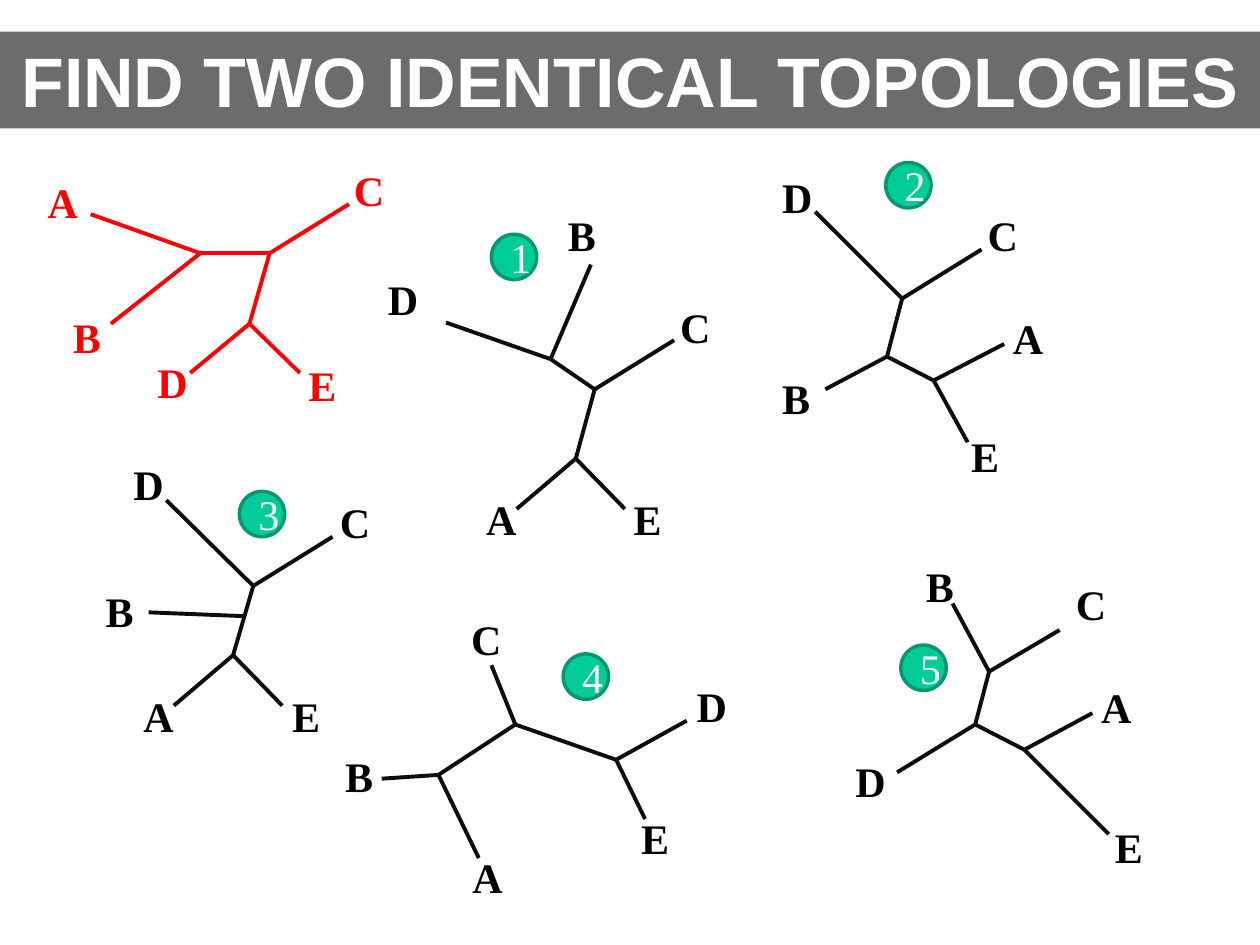
from dataclasses import dataclass

from lxml import etree
from pptx import Presentation
from pptx.dml.color import RGBColor
from pptx.enum.shapes import MSO_CONNECTOR, MSO_SHAPE
from pptx.enum.text import MSO_ANCHOR, MSO_AUTO_SIZE, PP_ALIGN
from pptx.oxml.ns import qn
from pptx.util import Inches, Pt

STRAIGHT, OVAL = MSO_CONNECTOR.STRAIGHT, MSO_SHAPE.OVAL
LEFT, CENTER = PP_ALIGN.LEFT, PP_ALIGN.CENTER
TOP, MIDDLE = MSO_ANCHOR.TOP, MSO_ANCHOR.MIDDLE
COLORS = {
    "banner": "404040", "white": "FFFFFF", "reference": "FF0000",
    "branch": "0D0D0D", "letter": "000000",
    "badge": "00CC99", "badge_edge": "009771",
}
SERIF, SANS = "Times New Roman", "Arial"
TITLE_ONLY = 5

# Grid of 1000 columns by 750 rows
SLIDE_WIDTH, SLIDE_HEIGHT = Inches(10), Inches(7.5)
CELL = SLIDE_WIDTH // 1000
LABEL_SIZE = (44, 51)
BADGE_SIZE = (36, 36)
Point = tuple[int, int]


@dataclass(frozen=True)
class Tip:
    letter: str
    joint: int      # index of the joint the branch grows from
    end: Point      # outer end of the branch
    label: Point    # top left of the letter's box


@dataclass(frozen=True)
class Tree:
    joints: tuple[Point, ...]
    tips: tuple[Tip, ...]
    trunk: tuple[tuple[int, int], ...] = ((0, 1), (1, 2))
    number: str = ""
    badge: Point = (0, 0)
    branch_color: str = "branch"
    letter_color: str = "letter"


TREES = (
    Tree(((159, 201), (214, 201), (198, 257)), (
        Tip("A", 0, (72, 170), (28, 135)),
        Tip("B", 0, (88, 257), (48, 242)),
        Tip("C", 1, (277, 162), (271, 126)),
        Tip("D", 2, (151, 296), (115, 278)),
        Tip("E", 2, (238, 296), (235, 280)),
    ), branch_color="reference", letter_color="reference"),
    Tree(((437, 285), (472, 309), (457, 364)), (
        Tip("D", 0, (354, 256), (298, 212)),
        Tip("B", 0, (469, 210), (441, 161)),
        Tip("C", 1, (535, 270), (530, 234)),
        Tip("A", 2, (410, 404), (376, 387)),
        Tip("E", 2, (496, 404), (493, 387)),
    ), number="1", badge=(390, 186)),
    Tree(((716, 237), (704, 283), (741, 302)), (
        Tip("D", 0, (647, 168), (611, 131)),
        Tip("C", 0, (779, 198), (774, 161)),
        Tip("B", 1, (655, 309), (611, 291)),
        Tip("A", 2, (797, 273), (794, 243)),
        Tip("E", 2, (768, 351), (761, 337)),
    ), number="2", badge=(703, 129)),
    # The branch of B starts partway along a single trunk line
    Tree(((201, 465), (185, 520), (193, 489)), (
        Tip("D", 0, (132, 397), (96, 359)),
        Tip("C", 0, (264, 426), (260, 389)),
        Tip("B", 2, (118, 486), (74, 460)),
        Tip("A", 1, (138, 560), (104, 543)),
        Tip("E", 1, (224, 560), (222, 543)),
    ), trunk=((0, 1),), number="3", badge=(190, 390)),
    Tree(((348, 615), (409, 575), (489, 603)), (
        Tip("B", 0, (303, 618), (264, 591)),
        Tip("A", 0, (380, 681), (365, 671)),
        Tip("C", 1, (390, 528), (364, 482)),
        Tip("D", 2, (545, 572), (543, 535)),
        Tip("E", 2, (512, 650), (499, 640)),
    ), number="4", badge=(447, 519)),
    Tree(((785, 533), (774, 575), (813, 595)), (
        Tip("B", 0, (756, 479), (725, 440)),
        Tip("C", 0, (841, 500), (844, 454)),
        Tip("D", 1, (712, 613), (669, 595)),
        Tip("A", 2, (867, 566), (864, 536)),
        Tip("E", 2, (880, 662), (875, 647)),
    ), number="5", badge=(715, 512)),
)


def cells(*counts: int) -> list[int]:
    return [count * CELL for count in counts]


def rgb(name: str) -> RGBColor:
    return RGBColor.from_string(COLORS[name])


def write(frame, text: str, *, color: str, size: int = 24, font: str = SERIF,
          bold: bool = False, align=LEFT, anchor=TOP, wrap: bool = True) -> None:
    frame.word_wrap = wrap
    frame.auto_size = MSO_AUTO_SIZE.NONE
    frame.vertical_anchor = anchor
    paragraph = frame.paragraphs[0]
    paragraph.alignment = align
    run = paragraph.add_run()
    run.text = text
    run.font.name, run.font.size, run.font.bold = font, Pt(size), bold
    run.font.color.rgb = rgb(color)


def draw_title(slide, text: str) -> None:
    banner = slide.shapes.title
    banner.left, banner.top, banner.width, banner.height = cells(0, 25, 1000, 77)
    banner.fill.solid()
    banner.fill.fore_color.rgb = rgb("banner")
    shade = banner.fill._xPr.find(qn("a:solidFill"))[0]
    etree.SubElement(shade, qn("a:alpha"), val="77000")
    write(banner.text_frame, text, color="white", size=40, font=SANS,
          bold=True, align=CENTER, anchor=MIDDLE)


def draw_branch(slide, start: Point, end: Point, color: str) -> None:
    branch = slide.shapes.add_connector(STRAIGHT, *cells(*start, *end))
    branch.line.color.rgb = rgb(color)
    branch.line.width = Pt(2.25)
    etree.SubElement(branch._element.spPr, qn("a:effectLst"))


def draw_badge(slide, number: str, corner: Point) -> None:
    badge = slide.shapes.add_shape(OVAL, *cells(*corner, *BADGE_SIZE))
    badge.shadow.inherit = False
    badge.fill.solid()
    badge.fill.fore_color.rgb = rgb("badge")
    badge.line.color.rgb = rgb("badge_edge")
    badge.line.width = Pt(2)
    write(badge.text_frame, number, color="white", align=CENTER, anchor=MIDDLE)


def draw_tree(slide, tree: Tree) -> None:
    for start, end in tree.trunk:
        draw_branch(slide, tree.joints[start], tree.joints[end], tree.branch_color)
    for tip in tree.tips:
        draw_branch(slide, tree.joints[tip.joint], tip.end, tree.branch_color)
        label = slide.shapes.add_textbox(*cells(*tip.label, *LABEL_SIZE))
        write(label.text_frame, tip.letter, color=tree.letter_color,
              bold=True, wrap=False)
    if tree.number:
        draw_badge(slide, tree.number, tree.badge)


def main() -> None:
    deck = Presentation()
    deck.slide_width, deck.slide_height = SLIDE_WIDTH, SLIDE_HEIGHT
    slide = deck.slides.add_slide(deck.slide_layouts[TITLE_ONLY])
    draw_title(slide, "FIND TWO IDENTICAL TOPOLOGIES")
    for tree in TREES:
        draw_tree(slide, tree)
    deck.save("out.pptx")


if __name__ == "__main__":
    main()
